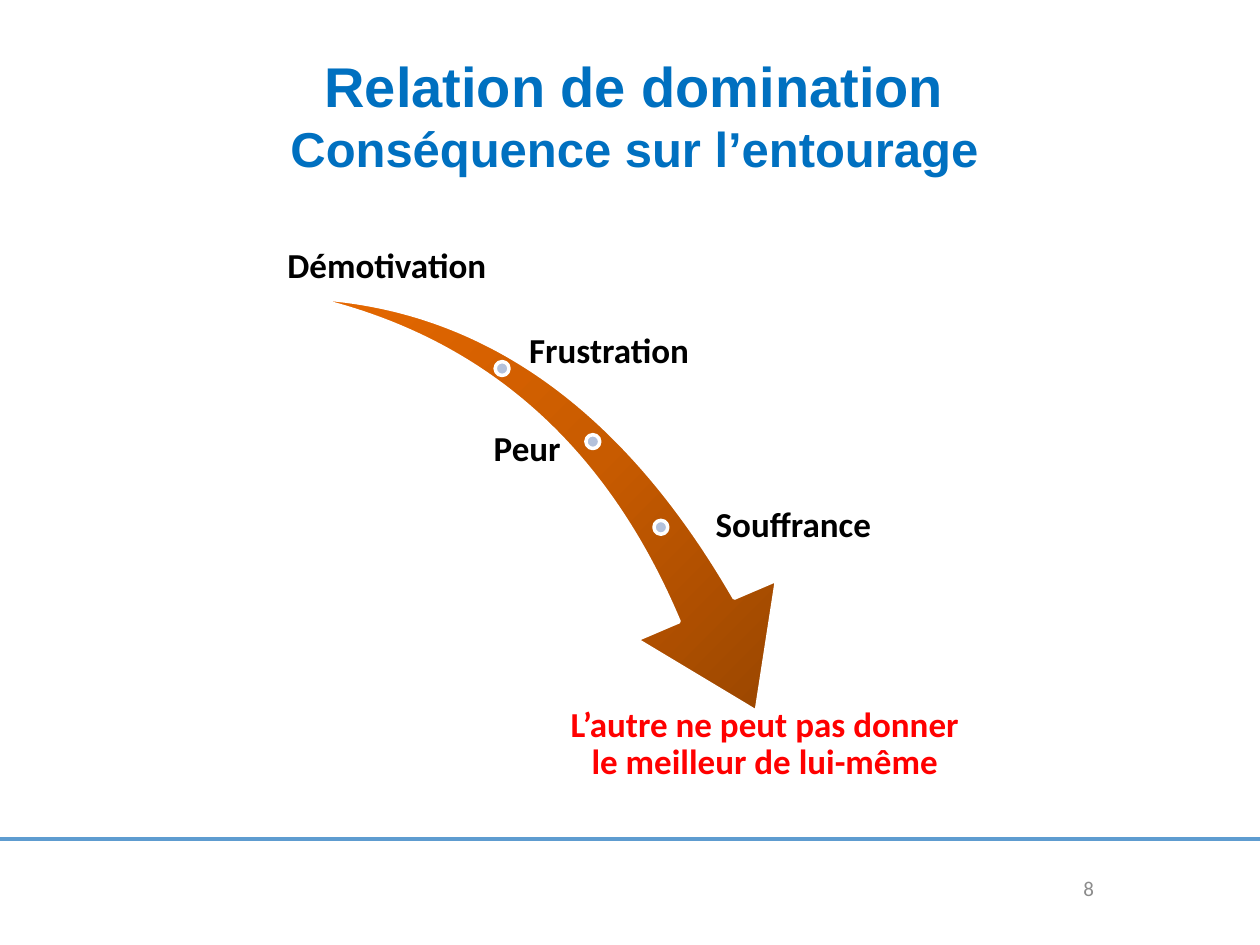
from lxml import etree
from pptx import Presentation
from pptx.dml.color import RGBColor
from pptx.enum.shapes import MSO_CONNECTOR, MSO_SHAPE
from pptx.enum.text import MSO_ANCHOR, MSO_AUTO_SIZE, PP_ALIGN
from pptx.oxml import parse_xml
from pptx.oxml.ns import nsdecls, qn
from pptx.util import Inches, Pt

LEFT, CENTER, RIGHT = PP_ALIGN.LEFT, PP_ALIGN.CENTER, PP_ALIGN.RIGHT
TOP, MIDDLE, BOTTOM = MSO_ANCHOR.TOP, MSO_ANCHOR.MIDDLE, MSO_ANCHOR.BOTTOM

# Content
TITLE = ("Relation de domination", "Conséquence sur l’entourage")
PAGE_NUMBER = "8"
# text, (left, top, width, height), alignment, anchor, colour name
LABELS = [
    ("Démotivation", (2.09, 1.53, 1.96, 0.77), CENTER, BOTTOM, "text"),
    ("Frustration", (4.17, 2.41, 2.86, 0.77), LEFT, MIDDLE, "text"),
    ("Peur", (2.08, 3.09, 2.4, 0.97), RIGHT, MIDDLE, "text"),
    ("Souffrance", (5.65, 3.79, 1.75, 0.77), LEFT, MIDDLE, "text"),
    ("L’autre ne peut pas donner le meilleur de lui-même",
     (4.41, 5.58, 3.32, 0.77), CENTER, TOP, "alert"),
]
DOTS = [(3.93, 2.87), (4.65, 3.45), (5.19, 4.13)]
DOT_SIZE = 0.11

THEME = {
    "title_font": "Arial", "body_font": "Calibri",
    "title_sizes": (32, 28), "label_size": 20, "number_size": 12,
    "title": "0070C0", "text": "000000", "alert": "FF0000",
    "number": "8C8C8C", "rule": "5E9CD0", "dot": "B3C1DB", "outline": "FFFFFF",
    "arrow": [(0, "8D4000"), (50, "C85B00"), (100, "EE6B00")],
}


def color(name):
    return RGBColor.from_string(THEME[name])


def style(r, font, size, color_name, bold=True):
    r.font.name = font
    r.font.size = Pt(size)
    r.font.bold = bold
    r.font.color.rgb = color(color_name)


def add_text(slide, text, box, align, anchor, size, color_name, bold=True):
    tf = slide.shapes.add_textbox(*map(Inches, box)).text_frame
    tf.word_wrap = True
    tf.vertical_anchor = anchor
    tf.text = text
    p = tf.paragraphs[0]
    p.alignment = align
    style(p.runs[0], THEME["body_font"], size, color_name, bold)
    return tf


def add_outlined(slide, kind, box):
    s = slide.shapes.add_shape(kind, *map(Inches, box))
    s.shadow.inherit = False
    s.line.color.rgb = color("outline")
    s.line.width = Pt(2)
    return s


def radial_fill(s, stops):
    """Give the shape a circular gradient centred on its bottom-right corner."""
    s.fill.background()
    stop_xml = "".join(
        f'<a:gs pos="{pos * 1000}"><a:srgbClr val="{rgb}"/></a:gs>' for pos, rgb in stops)
    grad = parse_xml(
        f'<a:gradFill {nsdecls("a")} rotWithShape="1"><a:gsLst>{stop_xml}</a:gsLst>'
        '<a:path path="circle"><a:fillToRect l="100000" t="100000"/></a:path></a:gradFill>')
    sp_pr = s._element.spPr
    sp_pr.replace(sp_pr.find(qn("a:noFill")), grad)


def main():
    prs = Presentation()
    prs.slide_width, prs.slide_height = Inches(10), Inches(7.5)
    slide = prs.slides.add_slide(prs.slide_layouts[5])

    # Footer rule and page number
    rule = slide.shapes.add_connector(
        MSO_CONNECTOR.STRAIGHT, 0, Inches(6.66), prs.slide_width, Inches(6.66))
    rule.line.color.rgb = color("rule")
    rule.line.width = Pt(2.25)
    etree.SubElement(rule._element.spPr, qn("a:effectLst"))
    add_text(slide, PAGE_NUMBER, (7.17, 6.85, 1.61, 0.4), RIGHT, MIDDLE,
             THEME["number_size"], "number", bold=False)

    # Title
    title = slide.shapes.title
    title.left, title.top, title.width, title.height = map(Inches, (0.98, 0.36, 8.11, 1.16))
    tf = title.text_frame
    tf.auto_size = MSO_AUTO_SIZE.NONE
    tf.vertical_anchor = TOP
    tf.text = "\v".join(TITLE)
    p = tf.paragraphs[0]
    p.alignment = CENTER
    for r, size in zip(p.runs, THEME["title_sizes"]):
        style(r, THEME["title_font"], size, "title")

    # Falling arrow
    arrow = add_outlined(slide, MSO_SHAPE.SWOOSH_ARROW, (2.37, 2.49, 4.16, 2.9))
    arrow.rotation = 73.3
    arrow.adjustments[0], arrow.adjustments[1] = 0.163, 0.314
    radial_fill(arrow, THEME["arrow"])

    # Milestones along the arrow
    for left, top in DOTS:
        dot = add_outlined(slide, MSO_SHAPE.OVAL, (left, top, DOT_SIZE, DOT_SIZE))
        dot.fill.solid()
        dot.fill.fore_color.rgb = color("dot")

    # Labels
    for text, box, align, anchor, color_name in LABELS:
        tf = add_text(slide, text, box, align, anchor, THEME["label_size"], color_name)
        tf.margin_left = tf.margin_right = tf.margin_top = tf.margin_bottom = Inches(0.03)
        tf.paragraphs[0].line_spacing = 0.9

    prs.save("out.pptx")


if __name__ == "__main__":
    main()
